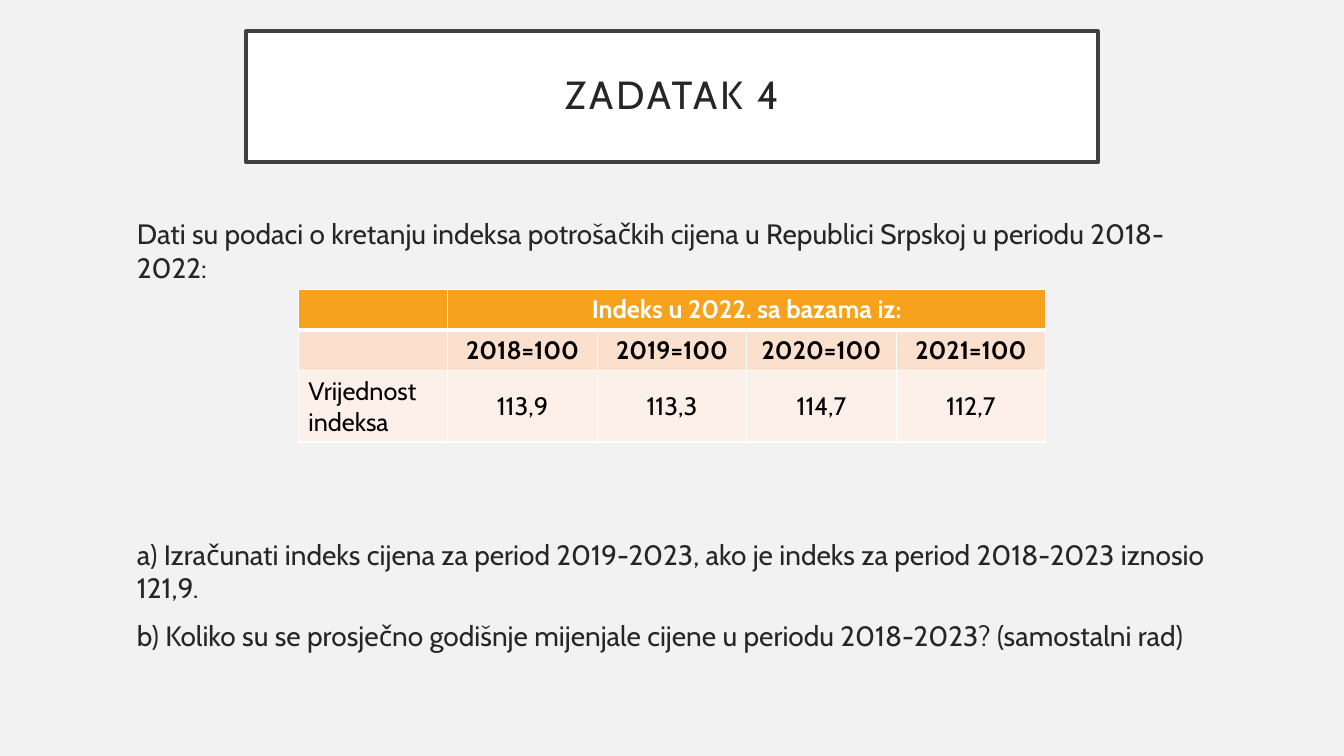
from lxml import etree
from pptx import Presentation
from pptx import util as u
from pptx.dml.color import RGBColor
from pptx.enum import shapes, text
from pptx.oxml.ns import qn

SLIDE_W, SLIDE_H = u.Inches(13.33), u.Inches(7.5)
FONT = "Cabin"
COLORS = {
    "background": "F2F2F2", "white": "FFFFFF", "frame": "404040", "ink": "262626",
    "black": "000000", "header": "F6A21D", "bases": "FBE0CD", "values": "FDF0E8",
}
INTRO = "Dati su podaci o kretanju indeksa potrošačkih cijena u Republici Srpskoj u periodu 2018-2022:"
QUESTIONS = [
    "a) Izračunati indeks cijena za period 2019-2023, ako je indeks za period 2018-2023 iznosio 121,9.",
    "b) Koliko su se prosječno godišnje mijenjale cijene u periodu 2018-2023? (samostalni rad)",
]
INDEX_ROWS = [
    ["", "Indeks u 2022. sa bazama iz:", "", "", ""],
    ["", "2018=100", "2019=100", "2020=100", "2021=100"],
    ["Vrijednost indeksa", "113,9", "113,3", "114,7", "112,7"],
]
ROW_STYLES = [("header", "white", True), ("bases", "black", True), ("values", "black", False)]
ROW_HEIGHTS = [5.4, 5.4, 9.4]
RULE_WIDTHS = [1, 3, 1, 1]


def across(percent):
    """Turn a percentage of the slide width into a length."""
    return int(SLIDE_W * percent / 100)


def down(percent):
    """Turn a percentage of the slide height into a length."""
    return int(SLIDE_H * percent / 100)


def paint(fill, color):
    """Apply a solid colour to a fill."""
    fill.solid()
    fill.fore_color.rgb = RGBColor.from_string(COLORS[color])


def write(paragraph, words, size, color="ink", bold=False):
    """Add one styled run to a paragraph and return it."""
    run = paragraph.add_run()
    run.text = words
    run.font.name, run.font.size, run.font.bold = FONT, u.Pt(size), bold
    run.font.color.rgb = RGBColor.from_string(COLORS[color])
    return run


def rule_cell(cell, top, bottom):
    """Draw white rules of the given point widths round a cell."""
    properties = cell._tc.get_or_add_tcPr()
    sides = {"a:lnL": 1, "a:lnR": 1, "a:lnT": top, "a:lnB": bottom}
    for position, (side, width) in enumerate(sides.items()):
        rule = etree.Element(qn(side), w=str(u.Pt(width)))
        fill = etree.SubElement(rule, qn("a:solidFill"))
        etree.SubElement(fill, qn("a:srgbClr"), val=COLORS["white"])
        properties.insert(position, rule)


def add_title(slide, words):
    """Add the framed title with widely spaced letters."""
    frame = slide.shapes.add_shape(
        shapes.MSO_SHAPE.RECTANGLE, across(18.3), down(4.13), across(63.4), down(17.33))
    frame.shadow.inherit = False
    paint(frame.fill, "white")
    paint(frame.line.fill, "frame")
    frame.line.width = u.Pt(2.5)
    frame.text_frame.vertical_anchor = text.MSO_ANCHOR.MIDDLE
    heading = frame.text_frame.paragraphs[0]
    heading.alignment, heading.line_spacing = text.PP_ALIGN.CENTER, 0.9
    write(heading, words, 28).font._element.set("spc", "200")


def add_task(slide):
    """Add the introduction and the questions, leaving room for the table."""
    body = slide.shapes.add_textbox(
        across(9.45), down(28), across(81.1), down(66.67)).text_frame
    body.word_wrap = True
    write(body.paragraphs[0], INTRO, 20)
    for question, gap in zip(QUESTIONS, [181, 10]):
        paragraph = body.add_paragraph()
        paragraph.space_before = u.Pt(gap)
        write(paragraph, question, 20)


def add_index_table(slide):
    """Add the price index table with its merged heading."""
    table = slide.shapes.add_table(
        len(INDEX_ROWS), len(INDEX_ROWS[0]), across(22.2), down(38.27),
        across(55.6), down(sum(ROW_HEIGHTS))).table
    table.cell(0, 1).merge(table.cell(0, 4))
    for row, (entries, (fill, color, bold)) in enumerate(zip(INDEX_ROWS, ROW_STYLES)):
        table.rows[row].height = down(ROW_HEIGHTS[row])
        for column, words in enumerate(entries):
            cell = table.cell(row, column)
            paint(cell.fill, fill)
            rule_cell(cell, RULE_WIDTHS[row], RULE_WIDTHS[row + 1])
            cell.vertical_anchor = text.MSO_ANCHOR.MIDDLE
            if words:
                entry = cell.text_frame.paragraphs[0]
                entry.alignment = text.PP_ALIGN.CENTER if column else text.PP_ALIGN.LEFT
                write(entry, words, 18, color, bold)


def main():
    """Build and save the slide."""
    deck = Presentation()
    deck.slide_width, deck.slide_height = SLIDE_W, SLIDE_H
    slide = deck.slides.add_slide(deck.slide_layouts[6])
    paint(slide.background.fill, "background")
    add_title(slide, "ZADATAK 4")
    add_task(slide)
    add_index_table(slide)
    deck.save("out.pptx")


if __name__ == "__main__":
    main()
